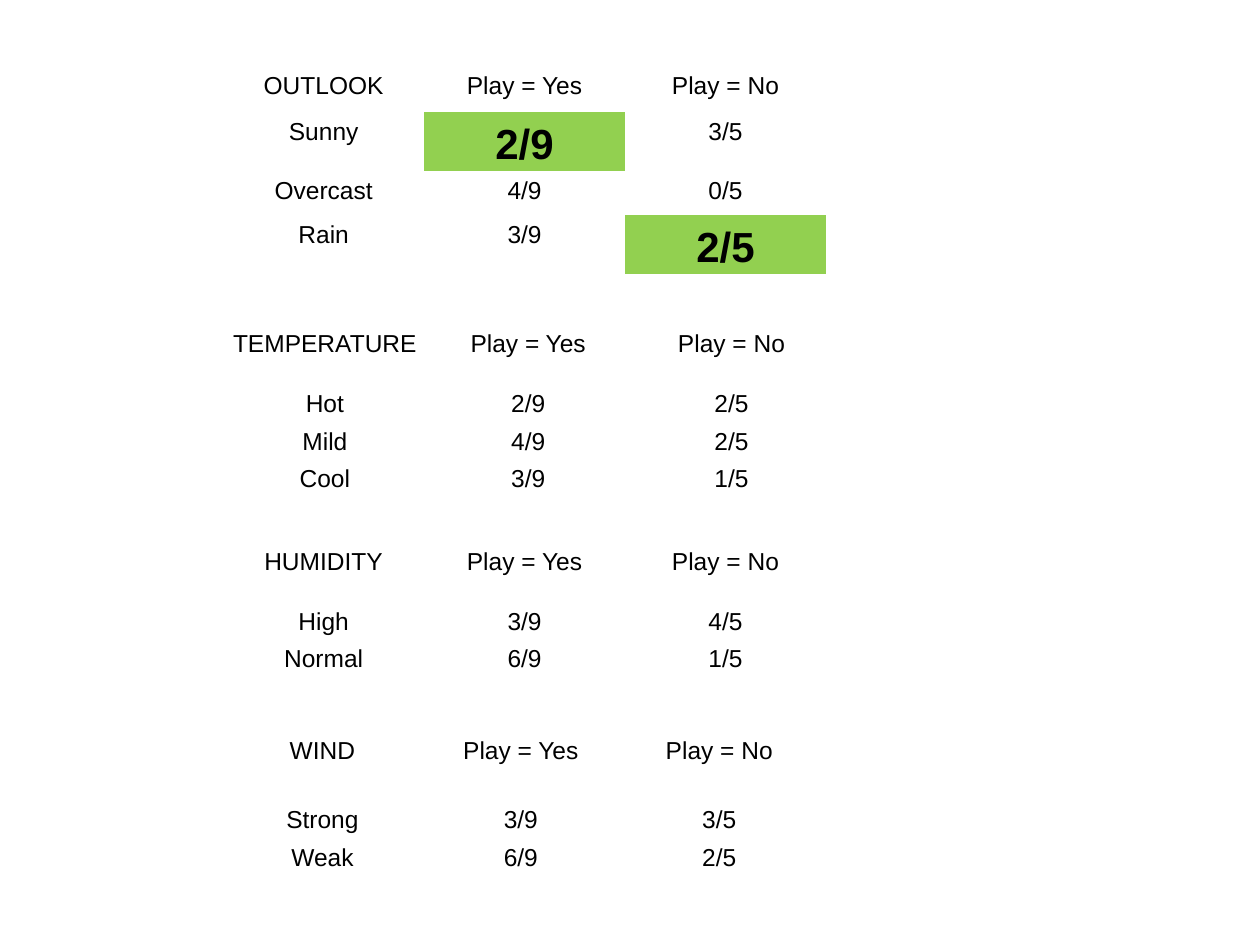
from lxml import etree
from pptx import Presentation
from pptx.dml.color import RGBColor
from pptx.enum.text import PP_ALIGN
from pptx.oxml.ns import qn
from pptx.util import Cm, Pt

CENTER = PP_ALIGN.CENTER
BLANK_LAYOUT = 6
COLORS = {"text": "000000", "highlight": "92D050"}
PLAIN_FONT = {"name": "Arial", "size": Pt(14), "bold": False}
STRONG_FONT = {"name": "Arial", "size": Pt(24), "bold": True}
MARGINS = dict.fromkeys(
    ("margin_left", "margin_right", "margin_top", "margin_bottom"), Cm(0.05)
)
TABLE_FORMAT = {"first_row": False, "horz_banding": False}
NO_STYLE = "{2D5ABB26-0587-4C30-8999-92F81FD0307C}"
COLUMN_COUNT = 4
LEFT = 4.5

FREQUENCIES = [
    {
        "attribute": "TEMPERATURE",
        "counts": [("Hot", "2/9", "2/5"), ("Mild", "4/9", "2/5"), ("Cool", "3/9", "1/5")],
        "top": 6.53, "column_width": 4.1, "header_height": 1.2, "row_height": 0.76,
    },
    {
        "attribute": "HUMIDITY",
        "counts": [("High", "3/9", "4/5"), ("Normal", "6/9", "1/5")],
        "top": 10.92, "column_width": 4.05, "header_height": 1.2, "row_height": 0.76,
    },
    {
        "attribute": "WIND",
        "counts": [("Strong", "3/9", "3/5"), ("Weak", "6/9", "2/5")],
        "top": 14.73, "column_width": 4, "header_height": 1.4, "row_height": 0.76,
    },
    {
        "attribute": "OUTLOOK",
        "counts": [("Sunny", "2/9", "3/5"), ("Overcast", "4/9", "0/5"), ("Rain", "3/9", "2/5")],
        "top": 1.32, "column_width": 4.05, "header_height": 0.94, "row_height": 0.89,
        "highlights": {(1, 1), (3, 2)},
    },
]


def apply_format(target, values):
    """Set each named attribute of the target."""
    for name, value in values.items():
        setattr(target, name, value)


def fill_cell(cell, label, highlighted):
    """Write one centred label, with a green ground when highlighted."""
    apply_format(cell, MARGINS)
    if highlighted:
        cell.fill.solid()
        cell.fill.fore_color.rgb = RGBColor.from_string(COLORS["highlight"])
    else:
        cell.fill.background()
    paragraph = cell.text_frame.paragraphs[0]
    if not label:
        etree.SubElement(paragraph._p, qn("a:endParaRPr"), sz="1400")
        return
    apply_format(paragraph, {"alignment": CENTER, "line_spacing": 1.15})
    run = paragraph.add_run()
    run.text = label
    apply_format(run.font, STRONG_FONT if highlighted else PLAIN_FONT)
    run.font.color.rgb = RGBColor.from_string(COLORS["text"])


def add_frequency_table(slide, attribute, counts, top, column_width,
                        header_height, row_height, highlights=()):
    """Add the likelihoods of one attribute, with a spare last column."""
    lines = [(attribute, "Play = Yes", "Play = No"), *counts]
    heights = [header_height] + [row_height] * len(counts)
    table = slide.shapes.add_table(
        len(lines), COLUMN_COUNT, Cm(LEFT), Cm(top),
        Cm(column_width * COLUMN_COUNT), Cm(sum(heights)),
    ).table
    apply_format(table, TABLE_FORMAT)
    table._tbl.tblPr.find(qn("a:tableStyleId")).text = NO_STYLE
    for column in table.columns:
        column.width = Cm(column_width)
    for row_index, (line, height) in enumerate(zip(lines, heights)):
        table.rows[row_index].height = Cm(height)
        for column_index, label in enumerate((*line, "")):
            fill_cell(table.cell(row_index, column_index), label,
                      (row_index, column_index) in highlights)


def main():
    """Build the slide of likelihood tables and save it."""
    presentation = Presentation()
    presentation.slide_width, presentation.slide_height = Cm(25.4), Cm(19.05)
    slide = presentation.slides.add_slide(presentation.slide_layouts[BLANK_LAYOUT])
    for frequency in FREQUENCIES:
        add_frequency_table(slide, **frequency)
    presentation.save("out.pptx")


if __name__ == "__main__":
    main()
